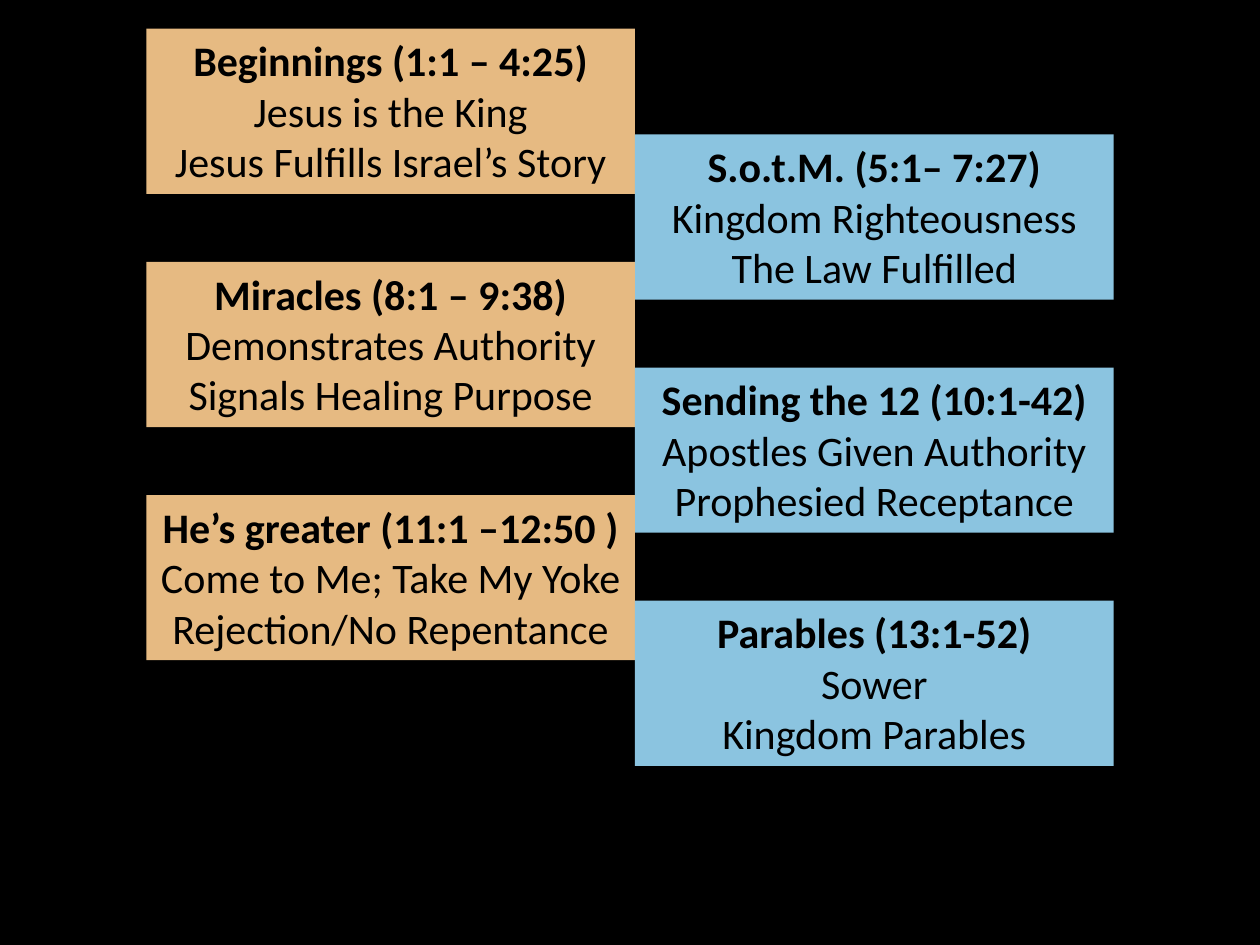
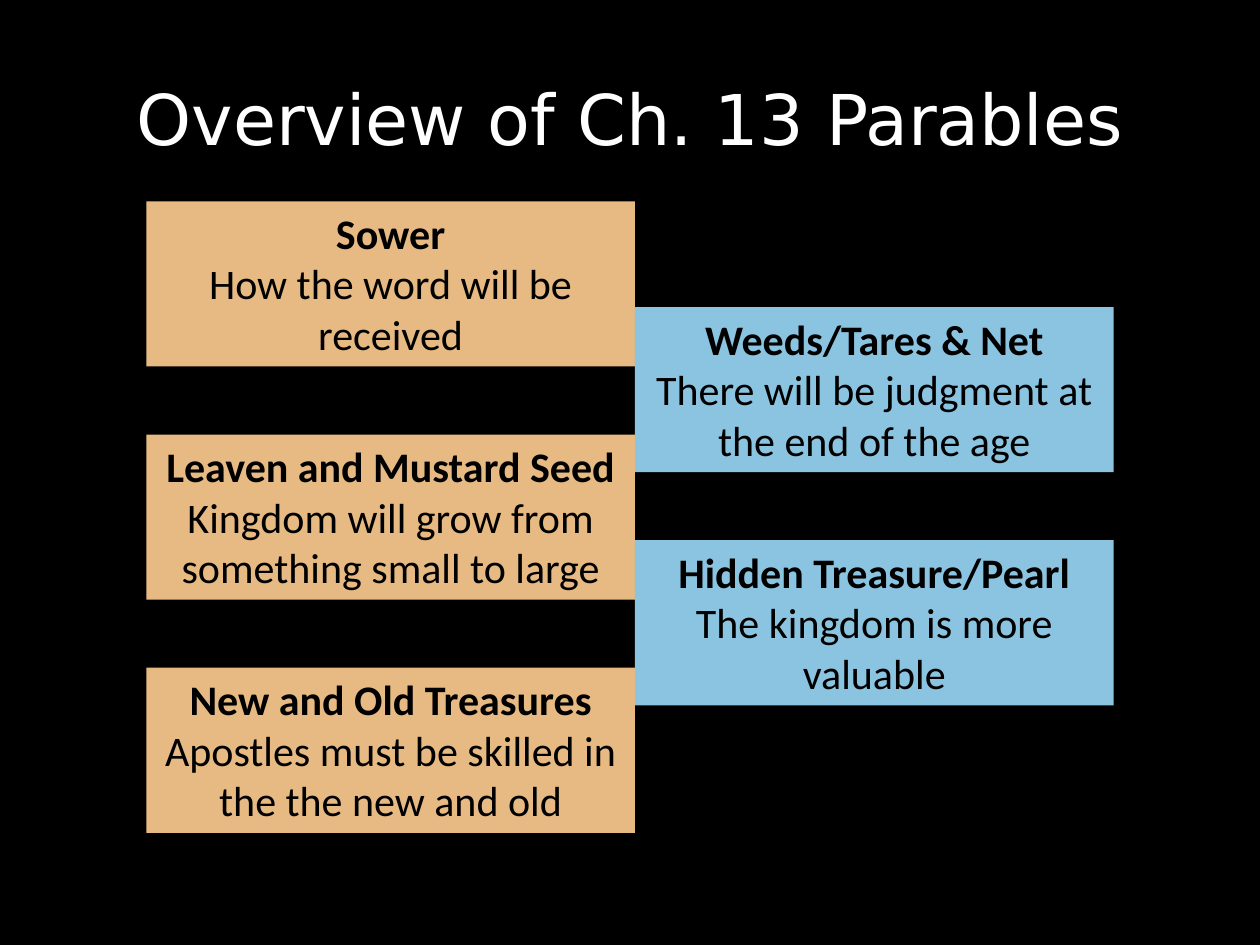
from pptx import Presentation
from pptx.dml.color import RGBColor
from pptx.enum.shapes import MSO_SHAPE as Kind
from pptx.enum.text import MSO_ANCHOR as Anchor, MSO_AUTO_SIZE as Fit, PP_ALIGN as Align
from pptx.util import Cm, Pt

SLIDES = [
    {
        "title": None,
        "top": 0.58,
        "cards": [
            ("Beginnings (1:1 – 4:25)", "Jesus is the King", "Jesus Fulfills Israel’s Story"),
            ("S.o.t.M. (5:1– 7:27)", "Kingdom Righteousness", "The Law Fulfilled"),
            ("Miracles (8:1 – 9:38)", "Demonstrates Authority", "Signals Healing Purpose"),
            ("Sending the 12 (10:1-42)", "Apostles Given Authority", "Prophesied Receptance"),
            ("He’s greater (11:1 –12:50 )", "Come to Me; Take My Yoke", "Rejection/No Repentance"),
            ("Parables (13:1-52)", "Sower", "Kingdom Parables"),
        ],
    },
    {
        "title": "Overview of Ch. 13 Parables",
        "top": 4.06,
        "cards": [
            ("Sower", "How the word will be received"),
            ("Weeds/Tares & Net", "There will be judgment at the end of the age"),
            ("Leaven and Mustard Seed", "Kingdom will grow from something small to large"),
            ("Hidden Treasure/Pearl", "The kingdom is more valuable"),
            ("New and Old Treasures", "Apostles must be skilled in the the new and old"),
        ],
    },
]

COLORS = {"back": "000000", "title": "FFFFFF", "text": "000000", "left": "E6BA82", "right": "8BC4E0"}
SIDES = [("left", 2.95, 9.85, 0), ("right", 12.8, 9.65, 2.13)]
PITCH = 4.7
HEIGHT = 3.33


def color(name):
    return RGBColor.from_string(COLORS[name])


def add_run(para, text, face, size, ink, bold=False):
    run = para.add_run()
    run.text = text
    font = run.font
    font.name, font.size, font.bold = face, Pt(size), bold
    font.color.rgb = color(ink)


def add_title(slide, text):
    title = slide.shapes.title
    title.left, title.top, title.width, title.height = Cm(0.45), Cm(0.64), Cm(24.5), Cm(3.68)
    title.text_frame.vertical_anchor = Anchor.MIDDLE
    para = title.text_frame.paragraphs[0]
    para.alignment = Align.CENTER
    para.line_spacing = 0.9
    add_run(para, text, "DejaVu Sans", 40, "title")


def add_card(slide, index, top, lines):
    row, col = divmod(index, 2)
    side, left, width, drop = SIDES[col]
    card = slide.shapes.add_shape(
        Kind.RECTANGLE, Cm(left), Cm(top + row * PITCH + drop), Cm(width), Cm(HEIGHT))
    card.shadow.inherit = False
    card.fill.solid()
    card.fill.fore_color.rgb = color(side)
    card.line.fill.background()
    frame = card.text_frame
    frame.word_wrap = True
    frame.auto_size = Fit.SHAPE_TO_FIT_TEXT
    frame.vertical_anchor = Anchor.TOP
    for spot, line in enumerate(lines):
        para = frame.add_paragraph() if spot else frame.paragraphs[0]
        para.alignment = Align.CENTER
        add_run(para, line, "Calibri", 24, "text", bold=spot == 0)


def main():
    deck = Presentation()
    deck.slide_width, deck.slide_height = Cm(25.4), Cm(19.05)
    for page in SLIDES:
        layout = deck.slide_layouts[5 if page["title"] else 6]
        slide = deck.slides.add_slide(layout)
        slide.background.fill.solid()
        slide.background.fill.fore_color.rgb = color("back")
        if page["title"]:
            add_title(slide, page["title"])
        for index, lines in enumerate(page["cards"]):
            add_card(slide, index, page["top"], lines)
    deck.save("out.pptx")


if __name__ == "__main__":
    main()
